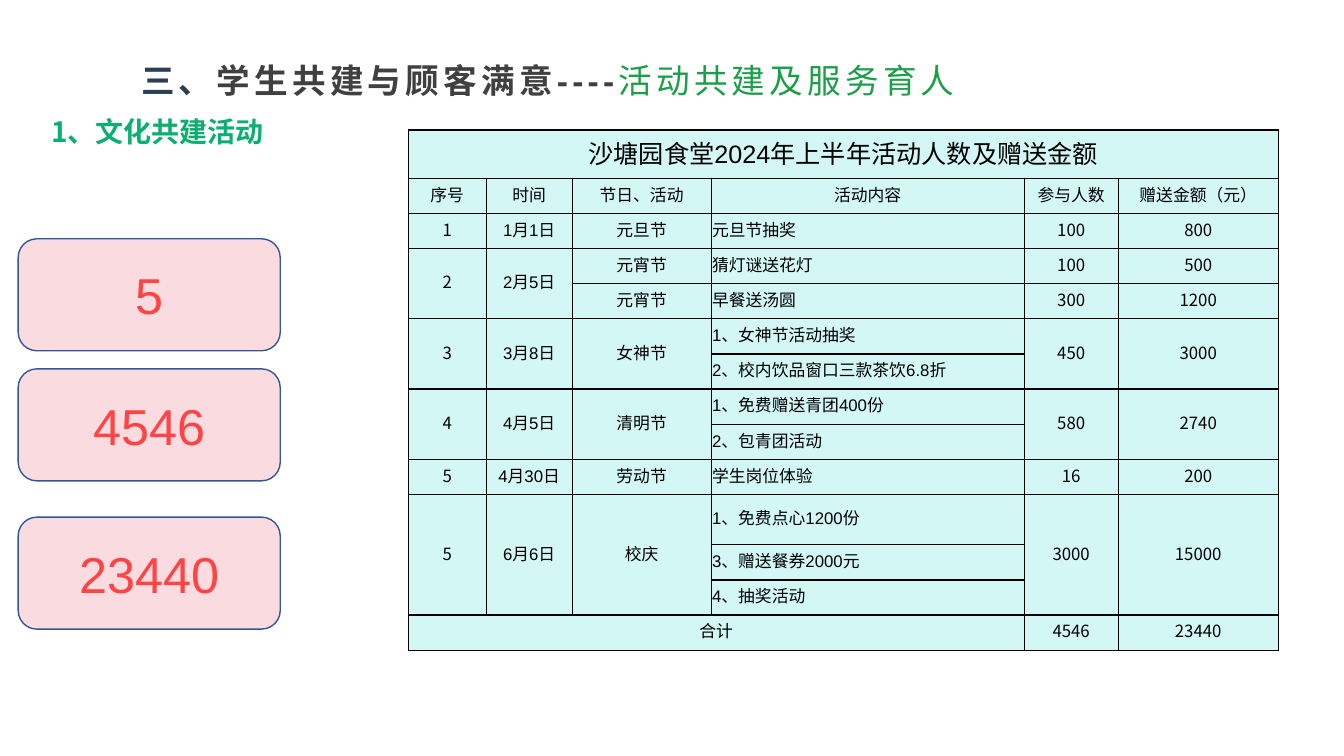
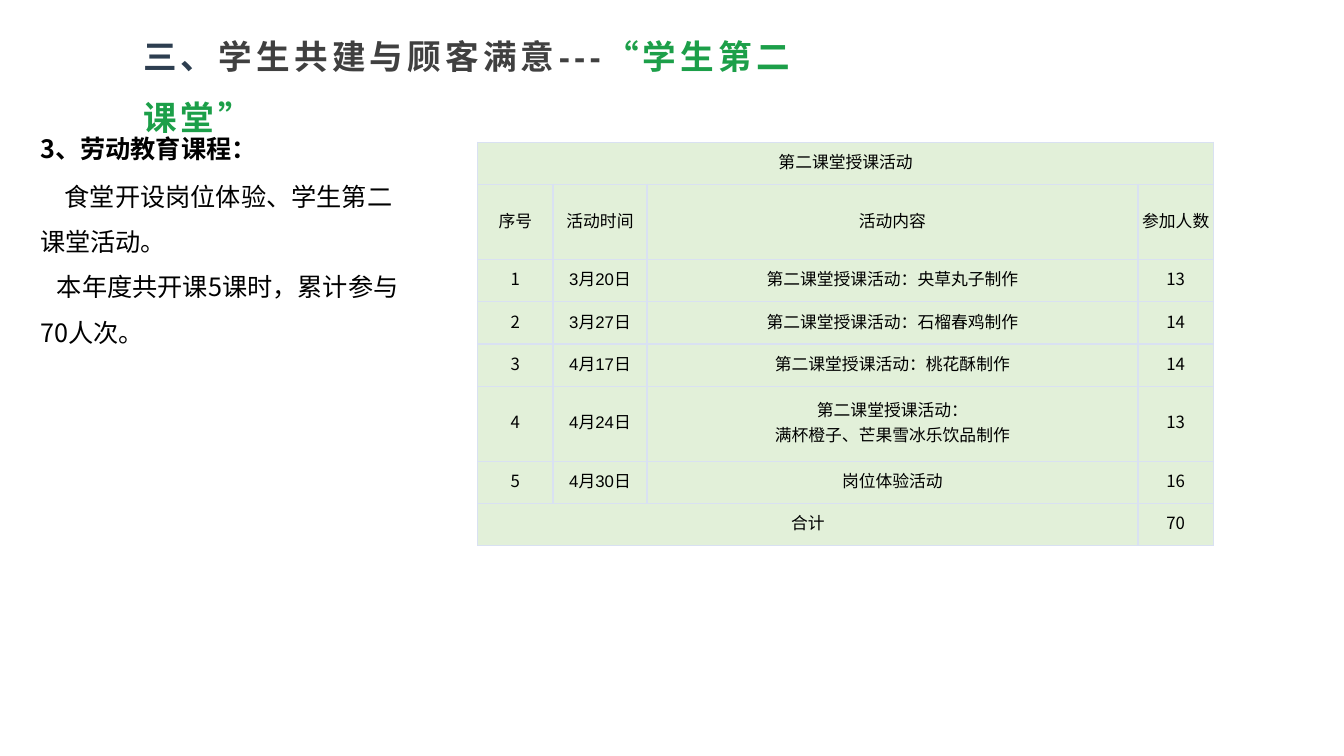
from dataclasses import dataclass

from lxml import etree
from pptx import Presentation
from pptx.dml.color import RGBColor
from pptx.enum.shapes import MSO_SHAPE
from pptx.enum.text import MSO_ANCHOR, MSO_AUTO_SIZE, PP_ALIGN
from pptx.oxml.ns import qn
from pptx.util import Pt

ROUND = MSO_SHAPE.ROUNDED_RECTANGLE
MIDDLE = MSO_ANCHOR.MIDDLE
NO_FIT = MSO_AUTO_SIZE.NONE
LEFT, CENTER = PP_ALIGN.LEFT, PP_ALIGN.CENTER
TITLE_ONLY = 5
UP, BACK = "^", "<"  # cell joins the one above / the one before


@dataclass(frozen=True)
class Theme:
    latin: str = "Arial"
    hans: str = "Noto Sans CJK SC"
    navy: str = "2D3E50"
    gray: str = "404040"
    green: str = "1C9F49"
    mint: str = "0CAF71"
    black: str = "000000"
    red: str = "FE4444"
    pink: str = "FADBDF"
    blue: str = "355696"
    aqua: str = "D3F7F5"
    leaf: str = "E2F0D9"
    pale: str = "D9E1F2"
    title: int = 24
    head: int = 20
    body: int = 18
    cell: int = 12
    figure: int = 36
    spread: float = 1.5


T = Theme()

EVENTS = [
    ["沙塘园食堂2024年上半年活动人数及赠送金额"] + [BACK] * 5,
    ["序号", "时间", "节日、活动", "活动内容", "参与人数", "赠送金额（元）"],
    ["1", "1月1日", "元旦节", "元旦节抽奖", "100", "800"],
    ["2", "2月5日", "元宵节", "猜灯谜送花灯", "100", "500"],
    [UP, UP, "元宵节", "早餐送汤圆", "300", "1200"],
    ["3", "3月8日", "女神节", "1、女神节活动抽奖", "450", "3000"],
    [UP, UP, UP, "2、校内饮品窗口三款茶饮6.8折", UP, UP],
    ["4", "4月5日", "清明节", "1、免费赠送青团400份", "580", "2740"],
    [UP, UP, UP, "2、包青团活动", UP, UP],
    ["5", "4月30日", "劳动节", "学生岗位体验", "16", "200"],
    ["5", "6月6日", "校庆", "1、免费点心1200份", "3000", "15000"],
    [UP, UP, UP, "3、赠送餐券2000元", UP, UP],
    [UP, UP, UP, "4、抽奖活动", UP, UP],
    ["合计", BACK, BACK, BACK, "4546", "23440"],
]

LESSONS = [
    ["第二课堂授课活动", BACK, BACK, BACK],
    ["序号", "活动时间", "活动内容", "参加人数"],
    ["1", "3月20日", "第二课堂授课活动：央草丸子制作", "13"],
    ["2", "3月27日", "第二课堂授课活动：石榴春鸡制作", "14"],
    ["3", "4月17日", "第二课堂授课活动：桃花酥制作", "14"],
    ["4", "4月24日", "第二课堂授课活动：\n满杯橙子、芒果雪冰乐饮品制作", "13"],
    ["5", "4月30日", "岗位体验活动", "16"],
    ["合计", BACK, BACK, "70"],
]


def paint(fill, color):
    fill.solid()
    fill.fore_color.rgb = RGBColor.from_string(color)


def add_run(para, text, size, color, bold=False, face=T.latin, space=0):
    run = para.add_run()
    run.text = text
    font = run.font
    font.size, font.bold, font.name = Pt(size), bold, face
    paint(font.fill, color)
    props = run._r.get_or_add_rPr()
    props.set("lang", "zh-CN")
    if space:
        props.set("spc", str(space * 100))
    etree.SubElement(props, qn("a:ea"), typeface=T.hans)


def set_pads(frame, left, top, right, bottom):
    frame.margin_left, frame.margin_top = Pt(left), Pt(top)
    frame.margin_right, frame.margin_bottom = Pt(right), Pt(bottom)


def place(shape, left, top, width, height):
    shape.left, shape.top = Pt(left), Pt(top)
    shape.width, shape.height = Pt(width), Pt(height)


def add_title(slide, box, pads, lead, topic, bold):
    """Write the section title: number, name and a green topic."""
    title = slide.shapes.title
    place(title, *box)
    frame = title.text_frame
    frame.auto_size, frame.word_wrap = NO_FIT, True
    frame.vertical_anchor = MIDDLE
    set_pads(frame, 7.2, pads[0], 7.2, pads[1])
    para = frame.paragraphs[0]
    para.alignment, para.line_spacing = LEFT, T.spread
    parts = [("三、", T.navy, True), (lead, T.gray, True),
             (topic, T.green, bold)]
    for text, color, heavy in parts:
        add_run(para, text, T.title, color, heavy, space=3)


def add_text(slide, left, top, width, height):
    box = slide.shapes.add_textbox(Pt(left), Pt(top), Pt(width), Pt(height))
    box.text_frame.word_wrap = True
    return box.text_frame


def add_card(slide, top, text):
    card = slide.shapes.add_shape(ROUND, Pt(13), Pt(top), Pt(187.2), Pt(80))
    card.shadow.inherit = False
    paint(card.fill, T.pink)
    paint(card.line.fill, T.blue)
    card.line.width = Pt(1)
    card.text_frame.vertical_anchor = MIDDLE
    para = card.text_frame.paragraphs[0]
    para.alignment = CENTER
    add_run(para, text, T.figure, T.red)


def add_edges(cell, color):
    props = cell._tc.get_or_add_tcPr()
    for i, side in enumerate(("lnL", "lnR", "lnT", "lnB")):
        line = etree.Element(qn("a:" + side), w=str(Pt(1)))
        fill = etree.SubElement(line, qn("a:solidFill"))
        etree.SubElement(fill, qn("a:srgbClr"), val=color)
        props.insert(i, line)


def count_marks(marks, mark):
    """Count how often the mark leads the list."""
    for i, item in enumerate(marks):
        if item != mark:
            return i
    return len(marks)


def fill_cell(cell, text, size, align):
    set_pads(cell, 0.7, 0.7, 0.7, 3.6)
    cell.vertical_anchor = MIDDLE
    frame = cell.text_frame
    for i, line in enumerate(text.split("\n")):
        para = frame.add_paragraph() if i else frame.paragraphs[0]
        para.alignment = align
        add_run(para, line, size, T.black,
                face=T.hans if line.isdigit() else T.latin)


def add_grid(slide, left, top, rows, widths, heights, fill, edge,
             head=T.cell, list_col=None):
    """Draw a table; list_col is the column set flush left below its head."""
    shape = slide.shapes.add_table(len(rows), len(widths), Pt(left), Pt(top),
                                   Pt(sum(widths)), Pt(sum(heights)))
    table = shape.table
    table.first_row = table.horz_banding = False
    for col, width in zip(table.columns, widths):
        col.width = Pt(width)
    for row, height in zip(table.rows, heights):
        row.height = Pt(height)
    for r, row in enumerate(rows):
        for c, text in enumerate(row):
            cell = table.cell(r, c)
            paint(cell.fill, fill)
            add_edges(cell, edge)
            if text in (UP, BACK):
                continue
            align = LEFT if c == list_col and r > 1 else CENTER
            fill_cell(cell, text, T.cell if r else head, align)
            down = count_marks([line[c] for line in rows[r + 1:]], UP)
            right = count_marks(row[c + 1:], BACK)
            if down or right:
                cell.merge(table.cell(r + down, c + right))


def add_events(deck):
    slide = deck.slides.add_slide(deck.slide_layouts[TITLE_ONLY])
    add_title(slide, (93.6, 42.5, 682.6, 40.3), (0, 26),
              "学生共建与顾客满意----", "活动共建及服务育人", False)
    frame = add_text(slide, 29.5, 78.5, 189.4, 31.7)
    add_run(frame.paragraphs[0], "1、文化共建活动", T.head, T.mint, True, T.hans)
    for top, text in ((170.6, "5"), (263.5, "4546"), (369.4, "23440")):
        add_card(slide, top, text)
    heights = [34.5] + [25.1] * 9 + [36] + [25.1] * 3
    add_grid(slide, 291.6, 92.9, EVENTS, [55.7, 61.4, 99.3, 223.6, 67.2, 114.3],
             heights, T.aqua, T.black, T.body, 3)


def add_lessons(deck):
    slide = deck.slides.add_slide(deck.slide_layouts[TITLE_ONLY])
    add_title(slide, (95, 25.9, 481, 40.3), (17, 0),
              "学生共建与顾客满意---", "“学生第二课堂”", True)
    frame = add_text(slide, 21.6, 80.6, 277.9, 239.8)
    notes = [("3、劳动教育课程：", True, 0, 0),
             ("食堂开设岗位体验、学生第二课堂活动。", False, 17.5, 2),
             ("本年度共开课5课时，累计参与70人次。", False, 12, 0)]
    for i, (text, bold, indent, gap) in enumerate(notes):
        para = frame.add_paragraph() if i else frame.paragraphs[0]
        para.line_spacing, para.space_before = T.spread, Pt(gap)
        para._p.get_or_add_pPr().set("indent", str(Pt(indent)))
        add_run(para, text, T.body, T.black, bold, T.hans)
    low, high = 30.3, 53.4
    add_grid(slide, 341.3, 101.5, LESSONS, [53.7, 67.2, 350.7, 54],
             [low, high, low, low, low, high, low, low], T.leaf, T.pale)


def main():
    deck = Presentation()
    deck.slide_width, deck.slide_height = Pt(960), Pt(540)
    add_events(deck)
    add_lessons(deck)
    deck.save("out.pptx")


if __name__ == "__main__":
    main()
